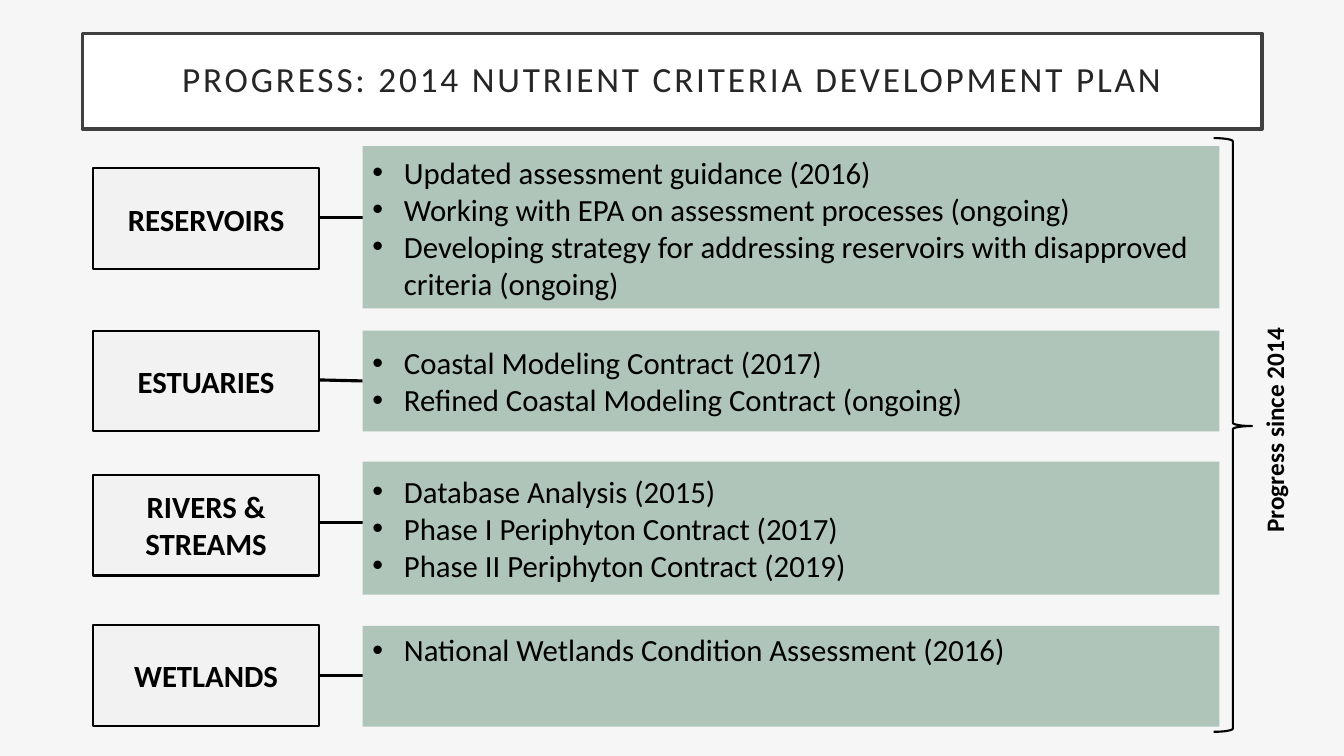
from pptx import Presentation
from pptx.dml.color import RGBColor
from pptx.enum.shapes import MSO_CONNECTOR as LINK, MSO_SHAPE as SHAPE
from pptx.enum.text import MSO_ANCHOR as ANCHOR, PP_ALIGN as ALIGN
from pptx.oxml.ns import qn
from pptx.util import Pt
from lxml.etree import SubElement

TITLE = "PROGRESS: 2014 NUTRIENT CRITERIA DEVELOPMENT PLAN"
SIDE_NOTE = "Progress since 2014"
WATERS = [
    {"name": "RESERVOIRS", "label_top": 120.24, "link": (155.5, 155.5),
     "top": 104.4, "height": 115.9, "anchor": ANCHOR.MIDDLE,
     "steps": ["Updated assessment guidance (2016)",
               "Working with EPA on assessment processes (ongoing)",
               "Developing strategy for addressing reservoirs with disapproved criteria (ongoing)"]},
    {"name": "ESTUARIES", "label_top": 236.2, "link": (271.4, 272.1),
     "top": 236.2, "height": 72, "anchor": ANCHOR.MIDDLE,
     "steps": ["Coastal Modeling Contract (2017)",
               "Refined Coastal Modeling Contract (ongoing)"]},
    {"name": "RIVERS & STREAMS", "label_top": 339.1, "link": (373, 373),
     "top": 329.8, "height": 95, "anchor": ANCHOR.MIDDLE,
     "steps": ["Database Analysis (2015)",
               "Phase I Periphyton Contract (2017)",
               "Phase II Periphyton Contract (2019)"]},
    {"name": "WETLANDS", "label_top": 446.4, "link": (482.4, 482.4),
     "top": 447.1, "height": 72, "anchor": ANCHOR.TOP,
     "steps": ["National Wetlands Condition Assessment (2016)"]},
]

BACKDROP = RGBColor(0xF6, 0xF6, 0xF6)
WHITE = RGBColor(0xFF, 0xFF, 0xFF)
PALE = RGBColor(0xF2, 0xF2, 0xF2)
SAGE = RGBColor(0xAF, 0xC5, 0xB9)
FRAME = RGBColor(0x40, 0x40, 0x40)
INK = RGBColor(0x26, 0x26, 0x26)
BLACK = RGBColor(0, 0, 0)

LABEL_LEFT, LABEL_WIDTH, LABEL_HEIGHT = 66.2, 162, 72
LABEL_RIGHT = LABEL_LEFT + LABEL_WIDTH
STEPS_LEFT, STEPS_WIDTH = 259, 612
INDENT = 22.5

TITLE_FONT = {"name": "Calibri", "size": Pt(25.2), "bold": False}
LABEL_FONT = {"name": "Calibri", "size": Pt(22), "bold": True}
STEP_FONT = {"name": "Calibri", "size": Pt(22), "bold": False}
NOTE_FONT = {"name": "Calibri", "size": Pt(18), "bold": True}


def add_box(page, kind, place, fill=None, line=None, weight=1.5):
    box = page.shapes.add_shape(kind, *map(Pt, place))
    box.shadow.inherit = False
    if fill is None:
        box.fill.background()
    else:
        box.fill.solid()
        box.fill.fore_color.rgb = fill
    if line is None:
        box.line.fill.background()
    else:
        box.line.color.rgb = line
        box.line.width = Pt(weight)
    return box


def add_bullet(para):
    properties = para._p.get_or_add_pPr()
    properties.set("marL", str(Pt(INDENT)))
    properties.set("indent", str(-Pt(INDENT)))
    SubElement(properties, qn("a:buFont")).set("typeface", "Arial")
    SubElement(properties, qn("a:buChar")).set("char", "•")


def write(box, lines, font, color=BLACK, align=ALIGN.CENTER, anchor=ANCHOR.MIDDLE, bullets=False):
    frame = box.text_frame
    frame.word_wrap = True
    frame.vertical_anchor = anchor
    for index, line in enumerate(lines):
        para = frame.add_paragraph() if index else frame.paragraphs[0]
        para.alignment = align
        if bullets:
            add_bullet(para)
        span = para.add_run()
        span.text = line
        for key, value in font.items():
            setattr(span.font, key, value)
        span.font.color.rgb = color
    return frame


def add_title(page):
    box = add_box(page, SHAPE.RECTANGLE, (59, 23.8, 842.4, 68.4), WHITE, FRAME, 2.5)
    frame = write(box, [TITLE], TITLE_FONT, INK)
    for side in ("left", "top", "right", "bottom"):
        setattr(frame, f"margin_{side}", Pt(14.4))
    para = frame.paragraphs[0]
    para.line_spacing = 0.9
    para.runs[0].font._element.set("spc", "200")


def add_water(page, water):
    label = add_box(page, SHAPE.RECTANGLE,
                    (LABEL_LEFT, water["label_top"], LABEL_WIDTH, LABEL_HEIGHT), PALE, BLACK)
    write(label, [water["name"]], LABEL_FONT)

    start, end = water["link"]
    link = page.shapes.add_connector(
        LINK.STRAIGHT, Pt(LABEL_RIGHT), Pt(start), Pt(STEPS_LEFT), Pt(end))
    link.line.color.rgb = BLACK
    link.line.width = Pt(2.25)
    SubElement(link._element.spPr, qn("a:effectLst"))

    steps = add_box(page, SHAPE.RECTANGLE,
                    (STEPS_LEFT, water["top"], STEPS_WIDTH, water["height"]), SAGE)
    write(steps, water["steps"], STEP_FONT, align=ALIGN.LEFT,
          anchor=water["anchor"], bullets=True)


def add_side_note(page):
    brace = add_box(page, SHAPE.LEFT_BRACE, (866.9, 98.6, 27.4, 424.1), line=BLACK)
    brace.rotation = 180
    brace.adjustments[0] = 0.083
    brace.adjustments[1] = 0.515
    note = page.shapes.add_textbox(*map(Pt, (715.7, 293, 388.8, 28.8)))
    note.rotation = 270
    write(note, [SIDE_NOTE], NOTE_FONT)


def main():
    deck = Presentation()
    deck.slide_width, deck.slide_height = Pt(960), Pt(540)
    page = deck.slides.add_slide(deck.slide_layouts[6])
    page.background.fill.solid()
    page.background.fill.fore_color.rgb = BACKDROP
    add_title(page)
    for water in WATERS:
        add_water(page, water)
    add_side_note(page)
    deck.save("out.pptx")


if __name__ == "__main__":
    main()
